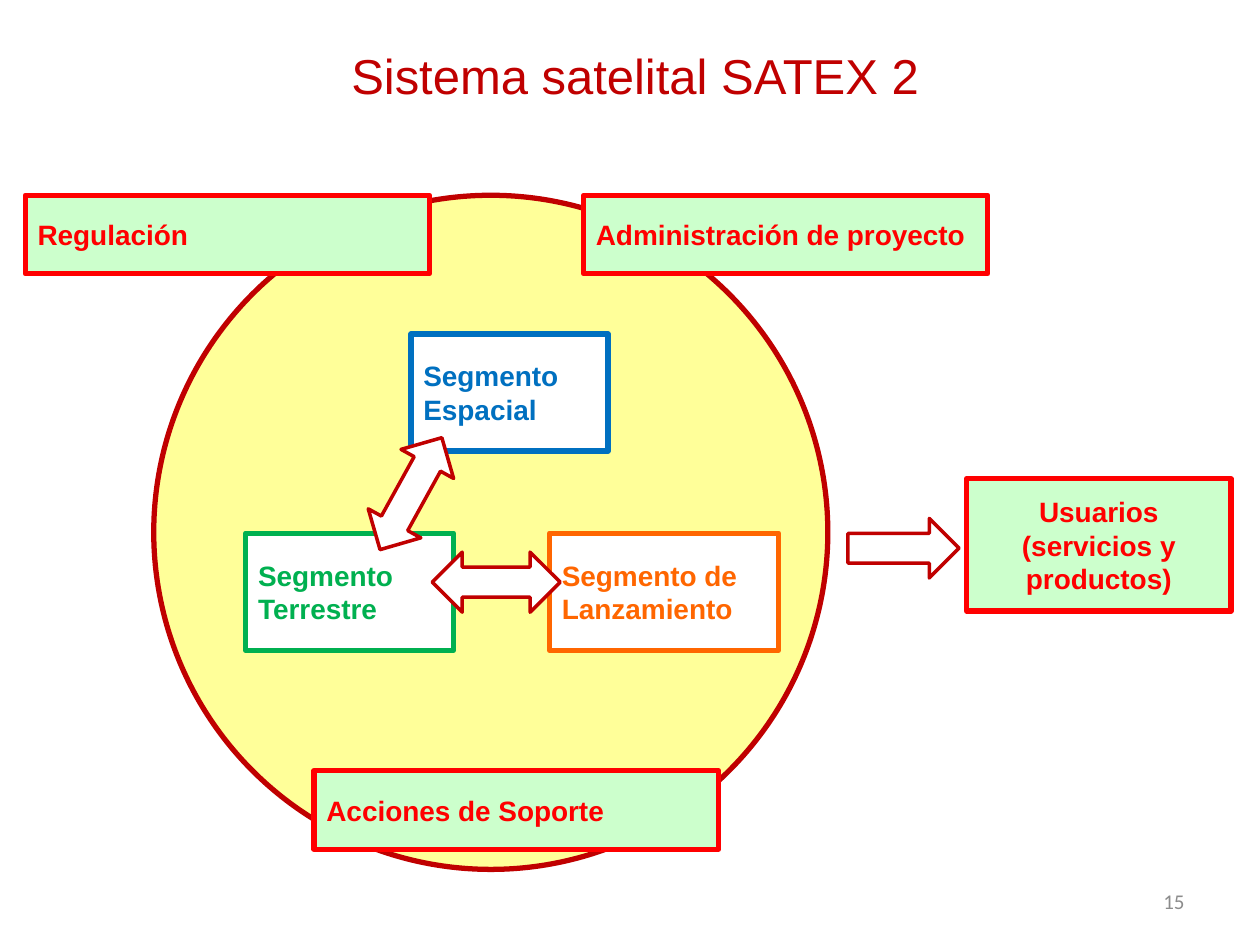
from pptx import Presentation
from pptx.dml.color import RGBColor
from pptx.enum.shapes import MSO_SHAPE as SHAPE
from pptx.enum.text import MSO_ANCHOR as ANCHOR, PP_ALIGN as ALIGN
from pptx.util import Inches, Pt

DARK_RED = RGBColor(0xC0, 0x00, 0x00)
RED = RGBColor(0xFF, 0x00, 0x00)
ORANGE = RGBColor(0xFF, 0x66, 0x00)
GREEN = RGBColor(0x00, 0xB0, 0x50)
BLUE = RGBColor(0x00, 0x70, 0xC0)
YELLOW = RGBColor(0xFF, 0xFF, 0x99)
MINT = RGBColor(0xCC, 0xFF, 0xCC)
WHITE = RGBColor(0xFF, 0xFF, 0xFF)
GREY = RGBColor(0x8C, 0x8C, 0x8C)

TITLE = (1.3, -0.03, 7.48, 1.25)
CIRCLE = (1.22, 1.55, 5.35, 5.35)
SEGMENTS = (1.95, 2.65, 4.23, 2.51)
SUPPORT = (0.2, 1.55, 7.64, 5.19)
USERS = (6.73, 3.8, 3.04, 1.05)
NUMBER = (7.17, 6.95, 2.33, 0.4)


def part(box, x, y, w, h):
    """Return the part of a box given by shares of its width and height."""
    left, top, width, height = box
    return left + x * width, top + y * height, w * width, h * height


def write(sp, text, size, color, align, font="Arial", bold=False):
    """Put one formatted, vertically centred paragraph in a shape."""
    tf = sp.text_frame
    tf.text = text
    tf.word_wrap = True
    tf.vertical_anchor = ANCHOR.MIDDLE
    p = tf.paragraphs[0]
    p.alignment = align
    f = p.runs[0].font
    f.name, f.size, f.bold = font, Pt(size), bold
    f.color.rgb = color


def add_outline(slide, kind, box, fill, line, weight):
    """Add a filled and outlined preset shape without shadow."""
    sp = slide.shapes.add_shape(kind, *map(Inches, box))
    sp.shadow.inherit = False
    sp.fill.solid()
    sp.fill.fore_color.rgb = fill
    sp.line.color.rgb = line
    sp.line.width = Pt(weight)
    return sp


def add_label(slide, box, text, fill, color, align=ALIGN.LEFT):
    """Add a process box whose text matches its border."""
    sp = add_outline(slide, SHAPE.FLOWCHART_PROCESS, box, fill, color, 3)
    write(sp, text, 16, color, align, bold=True)


def add_arrow(slide, kind, box, rotation=0):
    """Add a white block arrow with a dark red border."""
    sp = add_outline(slide, kind, box, WHITE, DARK_RED, 2)
    sp.rotation = rotation


def add_title(slide, box):
    """Place and format the title placeholder."""
    sp = slide.shapes.title
    sp.left, sp.top, sp.width, sp.height = map(Inches, box)
    write(sp, "Sistema satelital SATEX 2", 28, DARK_RED, ALIGN.CENTER)


def add_segments(slide, box):
    """Draw the three segments and the arrows that link them."""
    for text, color, x, y, w in (
        ("Segmento de Lanzamiento", ORANGE, 0.57, 0.63, 0.43),
        ("Segmento Terrestre", GREEN, 0, 0.63, 0.39),
        ("Segmento Espacial", BLUE, 0.31, 0, 0.37),
    ):
        add_label(slide, part(box, x, y, w, 0.37), text, WHITE, color)
    for x, y, rotation in ((0.35, 0.69, 0), (0.19, 0.41, 118.9)):
        add_arrow(slide, SHAPE.LEFT_RIGHT_ARROW,
                  part(box, x, y, 0.24, 0.19), rotation)


def add_support(slide, box):
    """Draw the banners around the edge of the circle."""
    for text, x, y in (
        ("Administración de proyecto", 0.58, 0),
        ("Regulación", 0, 0),
        ("Acciones de Soporte", 0.3, 0.88),
    ):
        add_label(slide, part(box, x, y, 0.42, 0.12), text, MINT, RED)


def add_users(slide, box):
    """Draw the users box and the arrow leading to it."""
    add_label(slide, part(box, 0.31, 0, 0.69, 1),
              "Usuarios (servicios y productos)", MINT, RED, ALIGN.CENTER)
    add_arrow(slide, SHAPE.RIGHT_ARROW, part(box, 0, 0.3, 0.29, 0.45))


def add_number(slide, box):
    """Write the slide number."""
    sp = slide.shapes.add_textbox(*map(Inches, box))
    write(sp, "15", 12, GREY, ALIGN.RIGHT, font="Calibri")


def main():
    """Build and save the slide."""
    prs = Presentation()
    prs.slide_width, prs.slide_height = Inches(10), Inches(7.5)
    slide = prs.slides.add_slide(prs.slide_layouts[5])
    add_title(slide, TITLE)
    add_outline(slide, SHAPE.OVAL, CIRCLE, YELLOW, DARK_RED, 3)
    add_segments(slide, SEGMENTS)
    add_support(slide, SUPPORT)
    add_number(slide, NUMBER)
    add_users(slide, USERS)
    prs.save("out.pptx")


if __name__ == "__main__":
    main()
